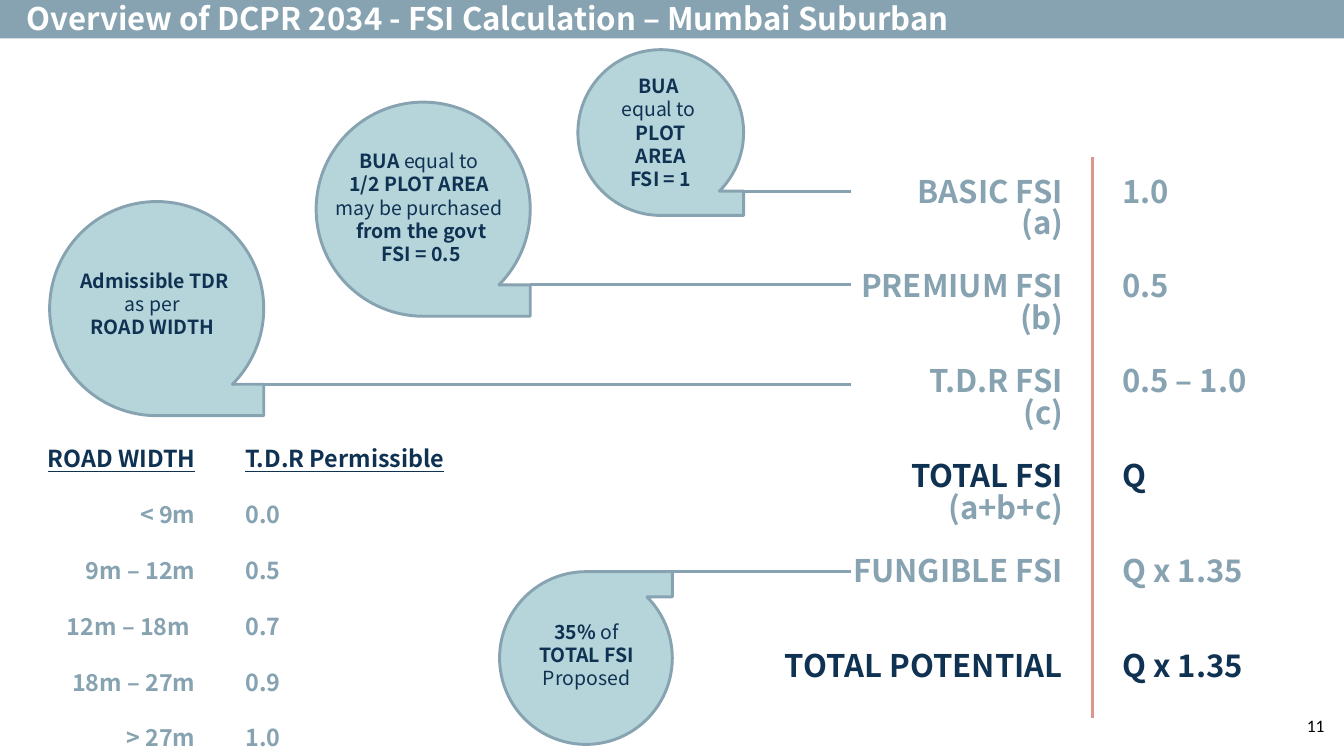
from math import sqrt
from pptx import Presentation
from pptx.dml.color import RGBColor
from pptx.enum.shapes import MSO_CONNECTOR, MSO_SHAPE
from pptx.enum.text import MSO_ANCHOR, PP_ALIGN
from pptx.oxml.ns import qn
from pptx.util import Pt
from lxml import etree

NAVY = RGBColor(0x0F, 0x32, 0x53)
SLATE = RGBColor(0x87, 0xA3, 0xB1)
AQUA = RGBColor(0xB6, 0xD5, 0xDA)
CORAL = RGBColor(0xDB, 0x95, 0x8B)
WHITE = RGBColor(0xFF, 0xFF, 0xFF)
BLACK = RGBColor(0, 0, 0)
LEFT, CENTER, RIGHT = PP_ALIGN.LEFT, PP_ALIGN.CENTER, PP_ALIGN.RIGHT

prs = Presentation()
prs.slide_width, prs.slide_height = Pt(1383.12), Pt(776.88)
slide = prs.slides.add_slide(prs.slide_layouts[6])
shapes = slide.shapes


def write(frame, lines, align, gap=0, spacing=1.0, **base):
    """Each line is a list of (text, format changes) runs."""
    frame.word_wrap = True
    for i, runs in enumerate(lines):
        paragraph = frame.paragraphs[0] if i == 0 else frame.add_paragraph()
        paragraph.alignment = align
        paragraph.line_spacing = spacing
        paragraph.space_before = Pt(gap if i else 0)
        for text, changes in runs:
            run = paragraph.add_run()
            run.text = text
            look = {"name": "Noto Sans CJK KR", "bold": True, "color": NAVY, **base, **changes}
            run.font.color.rgb = look.pop("color")
            for key, value in look.items():
                setattr(run.font, key, value)


def rule(x1, y1, x2, y2, color):
    connector = shapes.add_connector(MSO_CONNECTOR.STRAIGHT, Pt(x1), Pt(y1), Pt(x2), Pt(y2))
    connector.line.color.rgb = color
    connector.line.width = Pt(3)
    etree.SubElement(connector._element.spPr, qn("a:effectLst"))


# Title bar
bar = shapes.add_shape(MSO_SHAPE.RECTANGLE, 0, 0, prs.slide_width, Pt(39.6))
bar.shadow.inherit = False
bar.fill.solid()
bar.fill.fore_color.rgb = SLATE
bar.line.fill.background()

# Callouts: left, top, size, flipped, text area (None = inside the bubble), lines
LIGHT = {"bold": False}
callouts = [
    (594.7, 51.1, 170.6, False, None,
     [[("BUA ", {})], [("equal to ", LIGHT)], [("PLOT AREA", {})], [("FSI = 1", {})]]),
    (325.4, 105.1, 220.3, False, (279.4, 149.8, 308.2, 152.6),
     [[("BUA ", {}), ("equal to ", LIGHT)], [("1/2 PLOT AREA ", {})],
      [("may be purchased ", LIGHT)], [("from the govt", {})], [("FSI = 0.5", {})]]),
    (51.1, 207.4, 220.3, False, (5, 272.9, 308.2, 79.9),
     [[("Admissible TDR", {})], [("as per ", LIGHT)], [("ROAD WIDTH ", {})]]),
    (514.1, 588.2, 177.8, True, (487.4, 634.3, 236.9, 79.9),
     [[("35% ", {}), ("of ", LIGHT)], [("TOTAL FSI ", {})], [("Proposed ", LIGHT)]]),
]
TAIL_TOP = (1 + sqrt(0.5)) / 2  # height of the tail's upper edge within a bubble
for left, top, size, flipped, area, lines in callouts:
    bubble = shapes.add_shape(MSO_SHAPE.FLOWCHART_SEQUENTIAL_ACCESS_STORAGE,
                              Pt(left), Pt(top), Pt(size), Pt(size))
    bubble.shadow.inherit = False
    bubble.fill.solid()
    bubble.fill.fore_color.rgb = AQUA
    bubble.line.color.rgb = SLATE
    bubble.line.width = Pt(3)
    if flipped:
        bubble.rotation = 180
        bubble._element.spPr.get_or_add_xfrm().set("flipH", "1")
    leader_y = top if flipped else top + size * TAIL_TOP
    rule(left + size, leader_y, 876.2, leader_y, SLATE)
    if area:
        frame = shapes.add_textbox(*map(Pt, area)).text_frame
    else:
        frame = bubble.text_frame
        frame.vertical_anchor = MSO_ANCHOR.MIDDLE
    write(frame, lines, CENTER, size=Pt(20))

# Divider between FSI names and values
rule(1123.9, 161.3, 1123.9, 738.7, CORAL)

# Text columns
fsi_rows = [
    ("BASIC FSI", "1.0", SLATE),
    ("PREMIUM FSI", "0.5", SLATE),
    ("T.D.R FSI", "0.5 – 1.0", SLATE),
    ("TOTAL FSI", "Q", NAVY),
    ("FUNGIBLE FSI", "Q x 1.35", SLATE),
    ("TOTAL POTENTIAL", "Q x 1.35", NAVY),
]
fsi_names = [[(name, {"color": color})] for name, _, color in fsi_rows]
fsi_values = [[(value, {"color": color})] for _, value, color in fsi_rows]
fsi_terms = [[(term, {"color": SLATE})] for term in ("(a)", "(b)", "(c)", "(a+b+c)")]

tdr_rows = [("< 9m", "0.0"), ("9m – 12m", "0.5"), ("12m – 18m ", "0.7"),
            ("18m – 27m", "0.9"), ("> 27m", "1.0")]
road_widths, tdr_limits = (
    [[(heading, {"underline": True})]] + [[(row[i], {"color": SLATE})] for row in tdr_rows]
    for i, heading in enumerate(("ROAD WIDTH", "T.D.R Permissible")))

fsi_format = {"size": Pt(32), "gap": 63, "spacing": 0.9}
tdr_format = {"size": Pt(24), "gap": 28.7}
title = [[("Overview of DCPR 2034 - FSI Calculation – Mumbai Suburban", {"color": WHITE})]]
page_number = [[("11", {"name": "Calibri", "bold": False, "color": BLACK})]]
columns = [
    ((691.9, 177.8, 409, 540.7), fsi_names, RIGHT, fsi_format),
    ((956.2, 210.1, 145.4, 507), fsi_terms, RIGHT, fsi_format),
    ((1147.7, 177.8, 215.3, 540.7), fsi_values, LEFT, fsi_format),
    ((7.2, 453.6, 200.9, 322), road_widths, RIGHT, tdr_format),
    ((245.5, 453.6, 247.7, 322), tdr_limits, LEFT, tdr_format),
    ((20.2, 0, 1260, 51.1), title, LEFT, fsi_format),
    ((1227.6, 732.2, 142.6, 43.9), page_number, RIGHT, {"size": Pt(18)}),
]
for area, lines, align, text_format in columns:
    write(shapes.add_textbox(*map(Pt, area)).text_frame, lines, align, **text_format)

prs.save("out.pptx")
